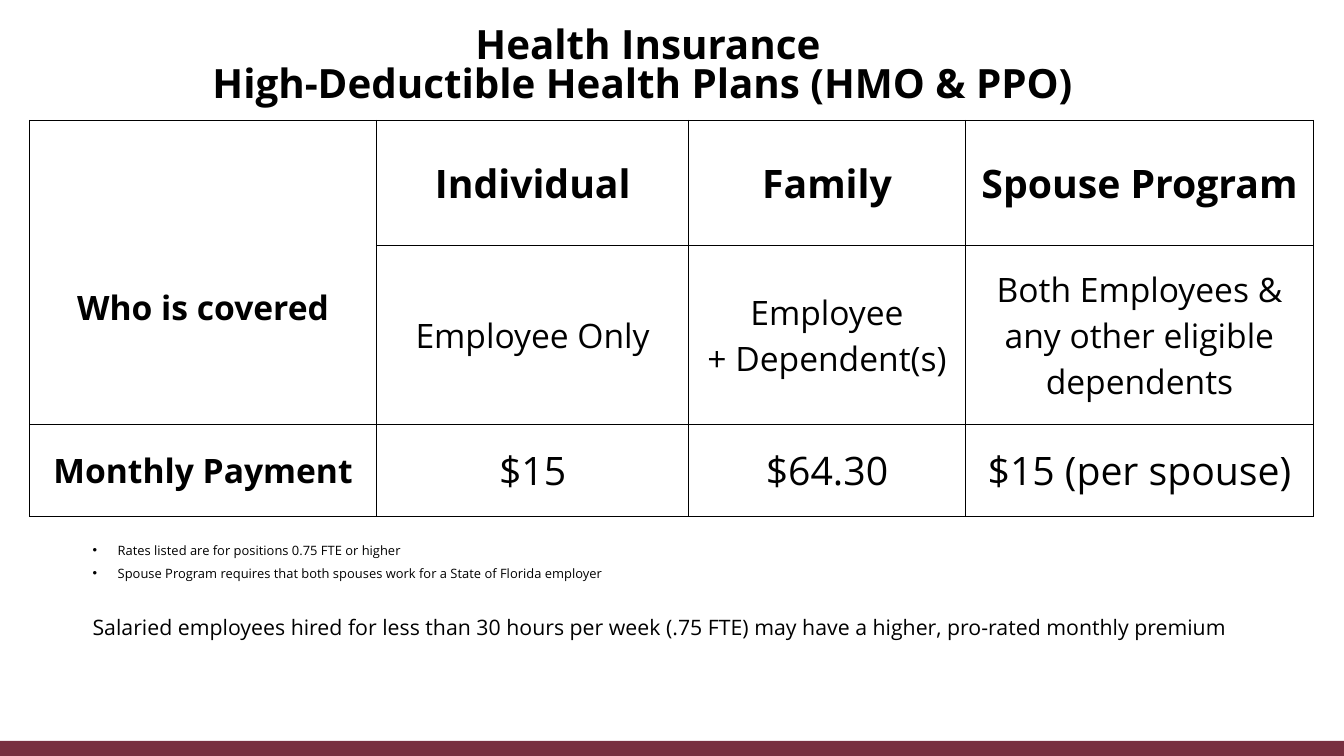
from lxml import etree
from pptx import Presentation
from pptx.dml.color import RGBColor
from pptx.enum.shapes import MSO_SHAPE
from pptx.enum.text import MSO_ANCHOR, MSO_AUTO_SIZE, PP_ALIGN
from pptx.oxml.ns import qn
from pptx.util import Pt

CENTER = PP_ALIGN.CENTER
MIDDLE = MSO_ANCHOR.MIDDLE
NO_FIT = MSO_AUTO_SIZE.NONE
RECT = MSO_SHAPE.RECTANGLE

FONT = "Open Sans"
COLORS = {"text": "000000", "line": "000000", "bar": "782F40"}

COLS = [247.7, 223.2, 197.3, 249.1]
ROWS = [89.3, 128.2, 65.5]

# Each cell: text, size, bold
CELLS = [
    [("Who is covered", 24, True), ("Individual", 28, True),
     ("Family", 28, True), ("Spouse Program", 28, True)],
    [("", 24, False), ("Employee Only", 24, False),
     ("Employee\n+ Dependent(s)", 24, False),
     ("Both Employees & any other eligible dependents", 24, False)],
    [("Monthly Payment", 24, True), ("$15", 28, False),
     ("$64.30", 28, False), ("$15 (per spouse)", 28, False)],
]

# Each note: text, size, space before, bullet
NOTES = [
    ("Rates listed are for positions 0.75 FTE or higher", 9.2, 0, True),
    ("Spouse Program requires that both spouses work for a State of Florida employer",
     9.2, 8.3, True),
    ("Salaried employees hired for less than 30 hours per week (.75 FTE) "
     "may have a higher, pro-rated monthly premium", 15.2, 28.7, False),
]


def color(name):
    return RGBColor.from_string(COLORS[name])


def style(para, size, bold=False):
    for run in para.runs:
        font = run.font
        font.name = FONT
        font.size = Pt(size)
        font.bold = bold
        font.color.rgb = color("text")


def set_title(slide, text):
    title = slide.shapes.title
    title.left, title.top = Pt(59), Pt(28.8)
    title.width, title.height = Pt(807.8), Pt(38.2)
    frame = title.text_frame
    frame.text = text
    frame.word_wrap = True
    frame.auto_size = NO_FIT
    frame.vertical_anchor = MIDDLE
    for para in frame.paragraphs:
        para.alignment = CENTER
        para.line_spacing = 0.8
        para.space_before = Pt(0)
        style(para, 28.8, True)


def add_bar(slide):
    bar = slide.shapes.add_shape(RECT, Pt(0), Pt(529.2), Pt(960), Pt(10.8))
    bar.shadow.inherit = False
    bar.fill.solid()
    bar.fill.fore_color.rgb = color("bar")
    bar.line.fill.background()


def add_edges(cell):
    props = cell._tc.get_or_add_tcPr()
    for side in ("lnL", "lnR", "lnT", "lnB"):
        line = etree.SubElement(props, qn(f"a:{side}"), w=str(Pt(0.8)))
        fill = etree.SubElement(line, qn("a:solidFill"))
        etree.SubElement(fill, qn("a:srgbClr"), val=COLORS["line"])


def fill_cell(cell, text, size, bold):
    add_edges(cell)
    cell.fill.background()
    cell.vertical_anchor = MIDDLE
    cell.text_frame.text = text
    for para in cell.text_frame.paragraphs:
        para.alignment = CENTER
        style(para, size, bold)


def add_grid(slide):
    frame = slide.shapes.add_table(len(ROWS), len(COLS), Pt(21.2), Pt(86),
                                   Pt(sum(COLS)), Pt(sum(ROWS)))
    table = frame.table
    table.first_row = False
    table.horz_banding = False
    for col, width in zip(table.columns, COLS):
        col.width = Pt(width)
    for row, height, items in zip(table.rows, ROWS, CELLS):
        row.height = Pt(height)
        for cell, item in zip(row.cells, items):
            fill_cell(cell, *item)
    # The first label spans two rows and sits below their middle
    label = table.cell(0, 0)
    label.merge(table.cell(1, 0))
    label.margin_top = Pt(53)


def add_bullet(para):
    props = para._p.get_or_add_pPr()
    props.set("marL", str(Pt(18)))
    props.set("indent", str(-Pt(18)))
    etree.SubElement(props, qn("a:buFont"), typeface="Arial")
    etree.SubElement(props, qn("a:buChar"), char="•")


def add_notes(slide):
    box = slide.shapes.add_textbox(Pt(59), Pt(387.4), Pt(841.7), Pt(77.8))
    frame = box.text_frame
    frame.word_wrap = True
    frame.text = "\n".join(note[0] for note in NOTES)
    for para, (_, size, gap, bullet) in zip(frame.paragraphs, NOTES):
        para.line_spacing = 0.7
        para.space_before = Pt(gap)
        if bullet:
            add_bullet(para)
        style(para, size)


def main():
    deck = Presentation()
    deck.slide_width, deck.slide_height = Pt(960), Pt(540)
    slide = deck.slides.add_slide(deck.slide_layouts[5])
    add_bar(slide)
    set_title(slide, "Health Insurance\nHigh-Deductible Health Plans (HMO & PPO) ")
    add_notes(slide)
    add_grid(slide)
    deck.save("out.pptx")


if __name__ == "__main__":
    main()
